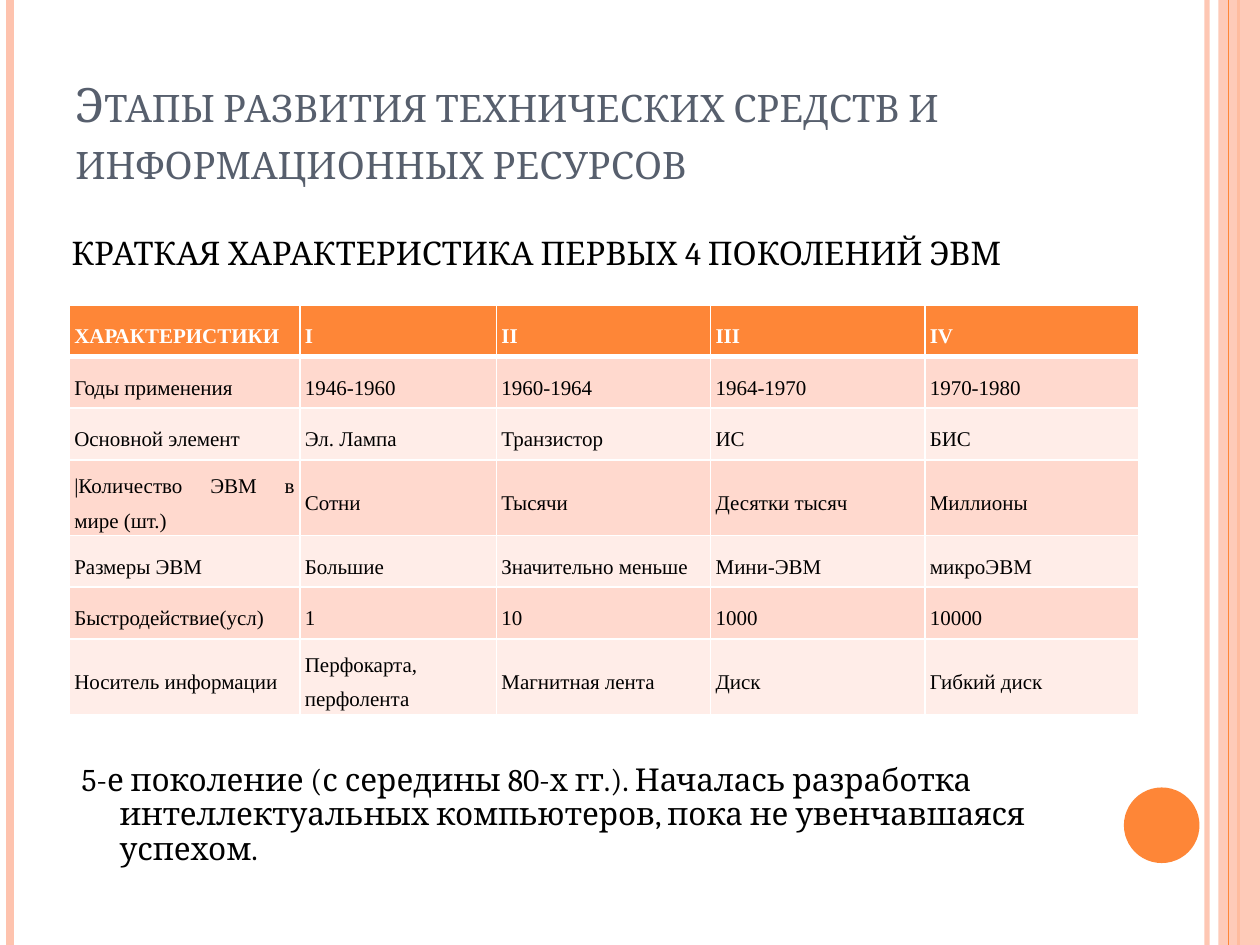
"""Build a slide comparing the first four computer generations."""
from lxml.etree import SubElement
from pptx import Presentation
from pptx.dml.color import RGBColor
from pptx.enum.shapes import MSO_CONNECTOR, MSO_SHAPE
from pptx.enum.text import MSO_ANCHOR, PP_ALIGN
from pptx.oxml.ns import qn
from pptx.util import Inches, Pt

WIDTH, HEIGHT = 10, 7.5
COLORS = {
    "accent": "FE8637", "pale": "FEC3AE", "title": "575F6D", "black": "000000",
    "white": "FFFFFF", "odd": "FFD9CE", "even": "FFEDE8",
}
TITLE = "Этапы развития технических средств и информационных ресурсов"
SUBTITLE = "КРАТКАЯ ХАРАКТЕРИСТИКА ПЕРВЫХ 4 ПОКОЛЕНИЙ ЭВМ"
FIFTH_GENERATION = (
    "5-е поколение (с середины 80-х гг.). Началась разработка "
    "интеллектуальных компьютеров, пока не увенчавшаяся успехом."
)
GENERATIONS = [
    ("ХАРАКТЕРИСТИКИ", "I", "II", "III", "IV"),
    ("Годы применения", "1946-1960", "1960-1964", "1964-1970", "1970-1980"),
    ("Основной элемент", "Эл. Лампа", "Транзистор", "ИС", "БИС"),
    ("|Количество ЭВМ в мире (шт.)", "Сотни", "Тысячи", "Десятки тысяч", "Миллионы"),
    ("Размеры ЭВМ", "Большие", "Значительно меньше", "Мини-ЭВМ", "микроЭВМ"),
    ("Быстродействие(усл)", "1", "10", "1000", "10000"),
    ("Носитель информации", "Перфокарта, перфолента", "Магнитная лента", "Диск", "Гибкий диск"),
]
COLUMN_WIDTHS = [1.83, 1.56, 1.7, 1.7, 1.7]
ROW_HEIGHT = 0.41
LEFT_STRIPES = [(9.58, 3, "pale", 93), (0.08, 4.5, "pale", 100), (9.83, 1.5, "accent", 100)]
EDGE_STRIPE = (9.75, 0.75, "accent", 100)
BAND_LEFT = 9.67


def rgb(name):
    return RGBColor.from_string(COLORS[name])


def set_alpha(properties, percent):
    color = next(properties.iter(qn("a:srgbClr")))
    SubElement(color, qn("a:alpha"), val=str(percent * 1000))


def add_stripe(slide, x, weight, color, opacity):
    stripe = slide.shapes.add_connector(
        MSO_CONNECTOR.STRAIGHT, Inches(x), 0, Inches(x), Inches(HEIGHT))
    stripe.line.color.rgb = rgb(color)
    stripe.line.width = Pt(weight)
    properties = stripe.element.spPr
    if opacity < 100:
        set_alpha(properties, opacity)
    SubElement(properties, qn("a:effectLst"))


def add_filled(slide, preset, box, color):
    shape = slide.shapes.add_shape(preset, *map(Inches, box))
    shape.shadow.inherit = False
    shape.fill.solid()
    shape.fill.fore_color.rgb = rgb(color)
    shape.line.fill.background()
    return shape


def write(frame, text, size, color="black", font="Cambria", bold=False, small_caps=False,
          align=None, spacing=None, before=0, after=0, hanging=0):
    frame.word_wrap = True
    paragraph = frame.paragraphs[0]
    paragraph.alignment = align
    paragraph.line_spacing = spacing
    paragraph.space_before, paragraph.space_after = Pt(before), Pt(after)
    if hanging:
        indents = paragraph._p.get_or_add_pPr()
        indents.set("marL", str(Inches(hanging)))
        indents.set("indent", str(-Inches(hanging)))
    run = paragraph.add_run()
    run.text = text
    run.font.size, run.font.name, run.font.bold = Pt(size), font, bold
    run.font.color.rgb = rgb(color)
    if small_caps:
        run._r.get_or_add_rPr().set("cap", "small")


def add_text(slide, box, text, size, anchor=MSO_ANCHOR.TOP, **style):
    frame = slide.shapes.add_textbox(*map(Inches, box)).text_frame
    frame.vertical_anchor = anchor
    write(frame, text, size, **style)


def add_borders(cell, bottom):
    properties = cell._tc.get_or_add_tcPr()
    for side, weight in (("L", 1), ("R", 1), ("T", 1), ("B", bottom)):
        border = SubElement(properties, qn(f"a:ln{side}"), w=str(Pt(weight)))
        fill = SubElement(border, qn("a:solidFill"))
        SubElement(fill, qn("a:srgbClr"), val=COLORS["white"])


def add_generations(slide, left, top):
    rows, columns = len(GENERATIONS), len(COLUMN_WIDTHS)
    table = slide.shapes.add_table(
        rows, columns, Inches(left), Inches(top),
        Inches(sum(COLUMN_WIDTHS)), Inches(rows * ROW_HEIGHT)).table
    for column, width in zip(table.columns, COLUMN_WIDTHS):
        column.width = Inches(width)
    for r, values in enumerate(GENERATIONS):
        table.rows[r].height = Inches(ROW_HEIGHT)
        header = r == 0
        background = "accent" if header else "odd" if r % 2 else "even"
        for c, value in enumerate(values):
            cell = table.cell(r, c)
            add_borders(cell, 3 if header else 1)
            cell.fill.solid()
            cell.fill.fore_color.rgb = rgb(background)
            cell.margin_left = cell.margin_right = Inches(0.04)
            cell.margin_top = cell.margin_bottom = 0
            cell.vertical_anchor = MSO_ANCHOR.MIDDLE
            write(cell.text_frame, value, 12, color="white" if header else "black",
                  font="Times New Roman", bold=header, align=PP_ALIGN.JUSTIFY,
                  spacing=1.5, after=10)


def main():
    deck = Presentation()
    deck.slide_width, deck.slide_height = Inches(WIDTH), Inches(HEIGHT)
    slide = deck.slides.add_slide(deck.slide_layouts[6])
    for stripe in LEFT_STRIPES:
        add_stripe(slide, *stripe)
    band = add_filled(slide, MSO_SHAPE.RECTANGLE,
                      (BAND_LEFT, 0, WIDTH - BAND_LEFT, HEIGHT), "pale")
    set_alpha(band.element.spPr, 87)
    add_stripe(slide, *EDGE_STRIPE)
    add_filled(slide, MSO_SHAPE.OVAL, (8.92, 6.25, 0.6, 0.6), "accent")
    add_text(slide, (0.5, 0.3, 8.17, 1.25), TITLE, 27, anchor=MSO_ANCHOR.BOTTOM,
             color="title", small_caps=True)
    add_generations(slide, 0.55, 2.42)
    add_text(slide, (0.47, 1.8, 8.52, 0.55), SUBTITLE, 18.6, before=6, hanging=0.3)
    add_text(slide, (0.55, 6.02, 8.75, 0.78), FIFTH_GENERATION, 18,
             before=6, hanging=0.3, spacing=0.9)
    deck.save("out.pptx")


if __name__ == "__main__":
    main()
